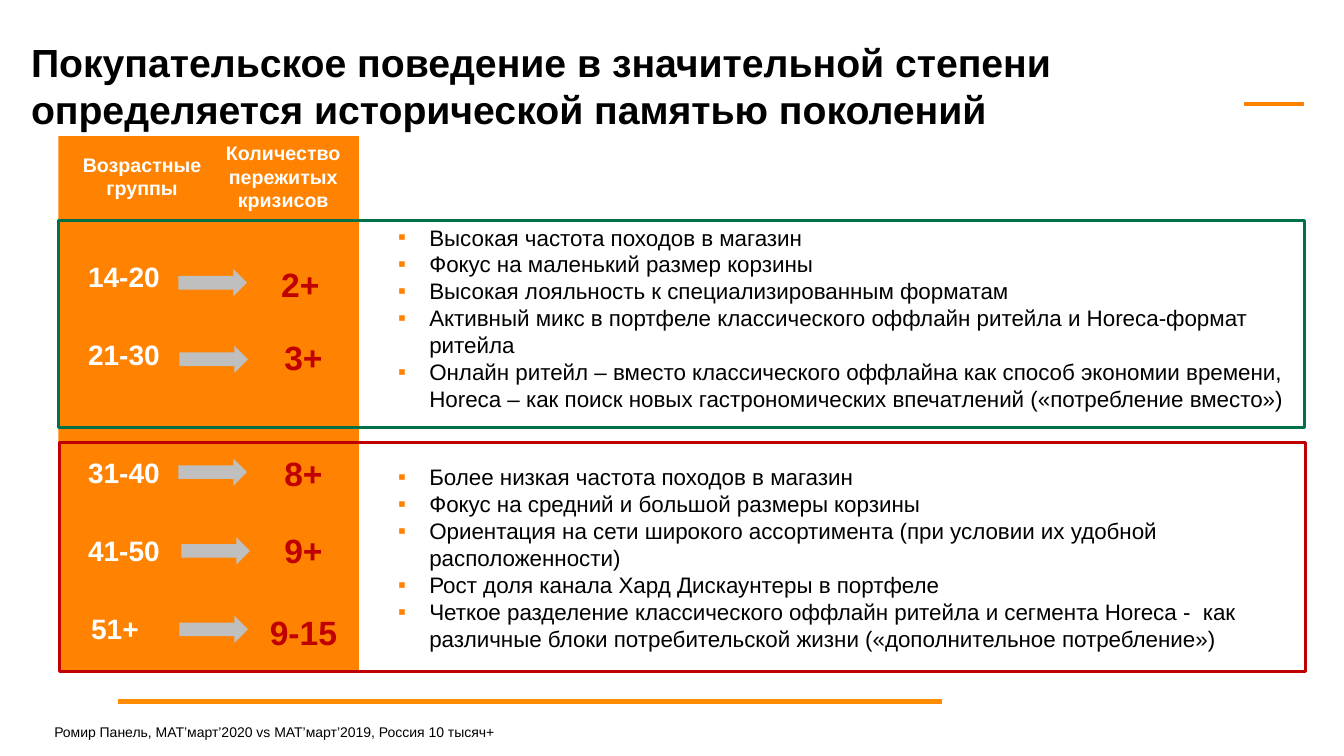
from dataclasses import dataclass

from lxml.etree import SubElement
from pptx import Presentation
from pptx.dml.color import RGBColor
from pptx.enum.shapes import MSO_CONNECTOR as Connector, MSO_SHAPE as Preset
from pptx.enum.text import MSO_ANCHOR as Anchor, PP_ALIGN as Align
from pptx.oxml.ns import qn
from pptx.shapes.autoshape import Shape
from pptx.slide import Slide
from pptx.text.text import Font
from pptx.util import Emu, Pt

PX = 9144
FONT = "Arial"
ORANGE = RGBColor(0xFF, 0x82, 0x00)
AMBER = RGBColor(0xFF, 0x8B, 0x00)
GREY = RGBColor(0xBF, 0xBF, 0xBF)
RED = RGBColor(0xC0, 0x00, 0x00)
GREEN = RGBColor(0x00, 0x71, 0x47)
WHITE = RGBColor(0xFF, 0xFF, 0xFF)
BLACK = RGBColor(0x00, 0x00, 0x00)


@dataclass(frozen=True)
class Box:
    """Position and size in px."""

    left: int
    top: int
    width: int
    height: int

    def emu(self) -> tuple[Emu, ...]:
        """Return the four lengths in EMU."""
        return tuple(Emu(v * PX) for v in (self.left, self.top, self.width, self.height))


@dataclass(frozen=True)
class Label:
    """Centred bold caption."""

    text: str
    box: Box
    size: int
    color: RGBColor


@dataclass(frozen=True)
class AgeRow:
    """Age group, arrow and number of crises lived through."""

    age: str
    age_left: int
    age_top: int
    arrow_left: int
    arrow_top: int
    crises: str
    crises_left: int
    crises_top: int


@dataclass(frozen=True)
class Behaviour:
    """Framed list of shopping habits."""

    frame: Box
    color: RGBColor
    list_top: int
    habits: tuple[str, ...]


@dataclass(frozen=True)
class Rule:
    """Horizontal accent line."""

    start: int
    end: int
    y: int
    color: RGBColor


RULES = (Rule(1293, 1234, 103, ORANGE), Rule(934, 117, 696, AMBER))

HEADERS = (
    Label("Количество пережитых кризисов", Box(178, 147, 206, 56), 14, WHITE),
    Label("Возрастные группы", Box(40, 157, 202, 36), 14, WHITE),
)

AGE_ROWS = (
    AgeRow("14-20", 58, 251, 177, 267, "2+", 233, 258),
    AgeRow("21-30", 58, 328, 178, 343, "3+", 236, 331),
    AgeRow("31-40", 58, 445, 177, 455, "8+", 236, 446),
    AgeRow("41-50", 58, 522, 180, 533, "9+", 236, 522),
    AgeRow("51+", 49, 600, 178, 611, "9-15", 236, 604),
)

BEHAVIOURS = (
    Behaviour(Box(59, 439, 1236, 227), RED, 455, (
        "Более низкая частота походов в магазин",
        "Фокус на средний и большой размеры корзины",
        "Ориентация на сети широкого ассортимента (при условии их удобной расположенности)",
        "Рост доля канала Хард Дискаунтеры в портфеле",
        "Четкое разделение классического оффлайн ритейла и сегмента Horeca -  как "
        "различные блоки потребительской жизни («дополнительное потребление»)",
    )),
    Behaviour(Box(58, 219, 1236, 205), GREEN, 217, (
        "Высокая частота походов в магазин",
        "Фокус на маленький размер корзины",
        "Высокая лояльность к специализированным форматам",
        "Активный микс в портфеле классического оффлайн ритейла и Horeca-формат ритейла",
        "Онлайн ритейл – вместо классического оффлайна как способ экономии времени, "
        "Horeca – как поиск новых гастрономических впечатлений («потребление вместо»)",
    )),
)


def add_rule(page: Slide, rule: Rule) -> None:
    """Draw an accent line without a shadow."""
    y = Emu(rule.y * PX)
    line = page.shapes.add_connector(
        Connector.STRAIGHT, Emu(rule.start * PX), y, Emu(rule.end * PX), y)
    line.line.color.rgb = rule.color
    line.line.width = Pt(3)
    SubElement(line._element.spPr, qn("a:effectLst"))


def add_preset(page: Slide, preset: Preset, box: Box, fill: RGBColor | None = None,
               outline: RGBColor | None = None) -> Shape:
    """Draw a preset shape with an optional fill and outline."""
    shape = page.shapes.add_shape(preset, *box.emu())
    shape.shadow.inherit = False
    if fill is None:
        shape.fill.background()
    else:
        shape.fill.solid()
        shape.fill.fore_color.rgb = fill
    if outline is None:
        shape.line.fill.background()
    else:
        shape.line.color.rgb = outline
        shape.line.width = Pt(2)
    return shape


def style(font: Font, size: int, color: RGBColor, bold: bool = False) -> None:
    """Set typeface, size, colour and weight."""
    font.name = FONT
    font.size = Pt(size)
    font.color.rgb = color
    font.bold = bold


def add_label(page: Slide, label: Label) -> None:
    """Write a centred caption inside an invisible ellipse."""
    frame = add_preset(page, Preset.OVAL, label.box).text_frame
    frame.word_wrap = True
    frame.vertical_anchor = Anchor.MIDDLE
    frame.margin_left = frame.margin_right = 0
    para = frame.paragraphs[0]
    para.text = label.text
    para.alignment = Align.CENTER
    style(para.font, label.size, label.color, True)


def add_text(page: Slide, box: Box, lines: tuple[str, ...], size: int,
             bold: bool = False, bulleted: bool = False) -> None:
    """Write black paragraphs in a wrapping text box."""
    frame = page.shapes.add_textbox(*box.emu()).text_frame
    frame.word_wrap = True
    for index, line in enumerate(lines):
        para = frame.add_paragraph() if index else frame.paragraphs[0]
        para.text = line
        if bulleted:
            props = para._p.get_or_add_pPr()
            props.set("marL", str(31 * PX))
            props.set("indent", str(-31 * PX))
            color = SubElement(props, qn("a:buClr"))
            SubElement(color, qn("a:srgbClr"), val=str(ORANGE))
            SubElement(props, qn("a:buFont"), typeface=FONT)
            SubElement(props, qn("a:buChar"), char="▪")
        style(para.font, size, BLACK, bold)


def main() -> None:
    """Build the slide and save the deck."""
    deck = Presentation()
    deck.slide_width, deck.slide_height = Emu(1333 * PX), Emu(750 * PX)
    page = deck.slides.add_slide(deck.slide_layouts[6])
    for rule in RULES:
        add_rule(page, rule)
    add_text(page, Box(21, 33, 1283, 104), (
        "Покупательское поведение в значительной степени "
        "определяется исторической памятью поколений",), 28, bold=True)
    add_preset(page, Preset.RECTANGLE, Box(58, 135, 298, 530), ORANGE)
    for header in HEADERS:
        add_label(page, header)
    for row in AGE_ROWS:
        add_label(page, Label(row.age, Box(row.age_left, row.age_top, 130, 47), 20, WHITE))
        add_preset(page, Preset.RIGHT_ARROW, Box(row.arrow_left, row.arrow_top, 68, 27), GREY)
        add_label(page, Label(
            row.crises, Box(row.crises_left, row.crises_top, 130, 47), 24, RED))
    for group in BEHAVIOURS:
        add_preset(page, Preset.RECTANGLE, group.frame, outline=group.color)
        add_text(page, Box(385, group.list_top, 906, 199), group.habits, 16, bulleted=True)
    add_text(page, Box(44, 713, 523, 27),
             ("Ромир Панель, MAT’март’2020 vs MAT’март’2019, Россия 10 тысяч+",), 10)
    deck.save("out.pptx")


if __name__ == "__main__":
    main()
